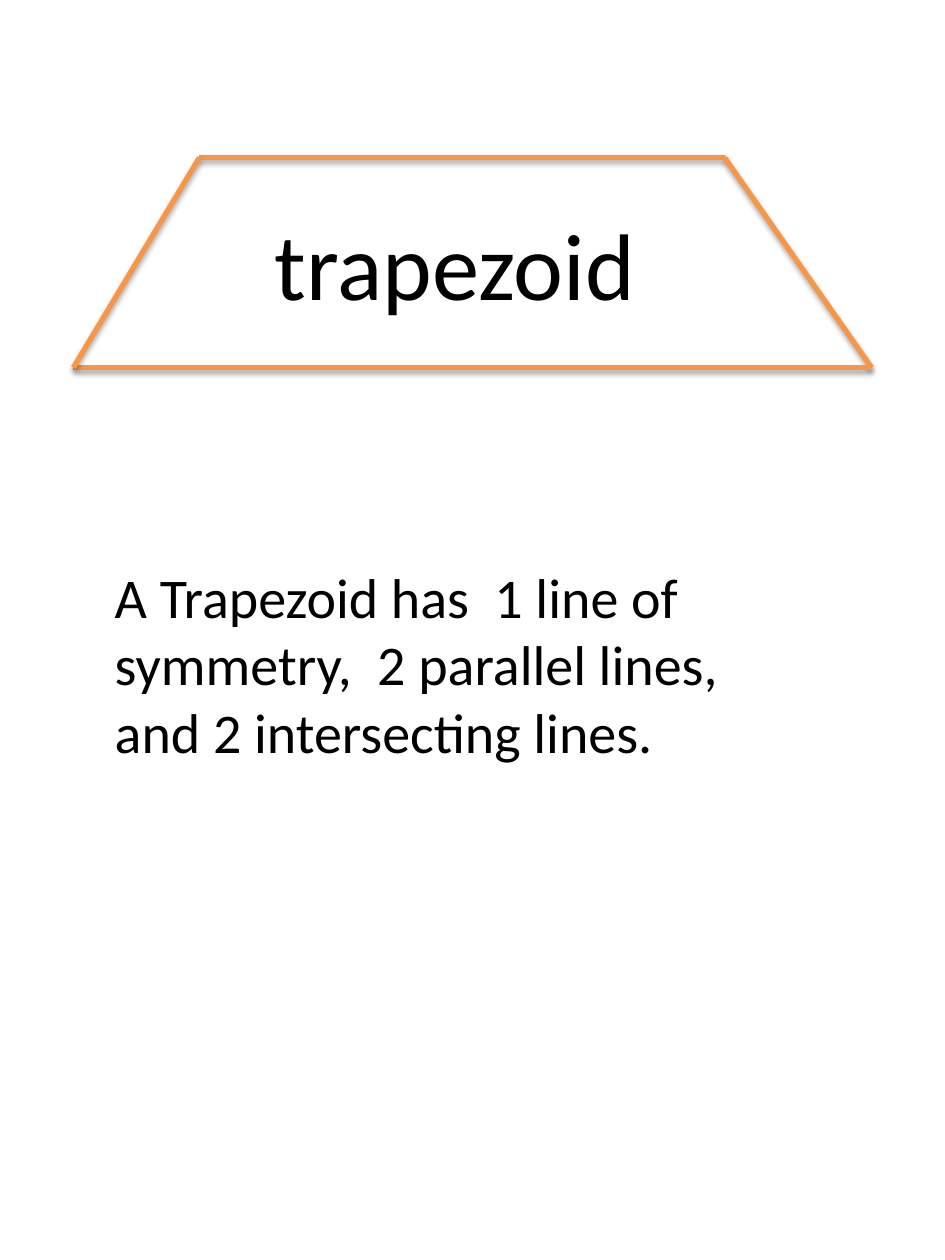
from itertools import pairwise

from lxml.etree import SubElement
from pptx import Presentation
from pptx.dml.color import RGBColor
from pptx.enum.shapes import MSO_CONNECTOR
from pptx.enum.text import MSO_AUTO_SIZE
from pptx.oxml.ns import qn
from pptx.util import Pt


def color(hex_code):
    return RGBColor.from_string(hex_code)


def write(frame, text, size=32, font="Calibri", fill="000000"):
    run = frame.paragraphs[0].add_run()
    run.text = text
    run.font.size = Pt(size)
    run.font.name = font
    run.font.color.rgb = color(fill)


def cast_shadow(connector):
    """Give the connector a soft shadow straight below it."""
    effects = SubElement(connector.element.spPr, qn("a:effectLst"))
    shadow = SubElement(effects, qn("a:outerShdw"), blurRad=str(Pt(3.1)),
                        dist=str(Pt(1.8)), dir="5400000", rotWithShape="0")
    black = SubElement(shadow, qn("a:srgbClr"), val="000000")
    SubElement(black, qn("a:alpha"), val="35000")


class GeometryCard:
    outline = "F79646"
    outline_width = 3

    def __init__(self, slide):
        self.slide = slide

    def polygon(self, corners):
        """Draw a closed outline as a group of separate sides."""
        sides = self.slide.shapes.add_group_shape().shapes
        for start, end in pairwise([*corners, corners[0]]):
            side = sides.add_connector(
                MSO_CONNECTOR.STRAIGHT, *map(Pt, (*start, *end)))
            side.line.color.rgb = color(self.outline)
            side.line.width = Pt(self.outline_width)
            cast_shadow(side)

    def text(self, text, left, top, width, height, **style):
        box = self.slide.shapes.add_textbox(*map(Pt, (left, top, width, height)))
        frame = box.text_frame
        frame.word_wrap = True
        frame.auto_size = MSO_AUTO_SIZE.SHAPE_TO_FIT_TEXT
        write(frame, text, **style)


def main():
    deck = Presentation()
    deck.slide_width, deck.slide_height = Pt(540), Pt(720)
    card = GeometryCard(deck.slides.add_slide(deck.slide_layouts[6]))

    card.polygon([(114, 90), (414, 90), (498, 210), (42, 210)])
    card.text("trapezoid", 150, 114, 288, 72.7, size=54)
    card.text("A Trapezoid has  1 line of symmetry,  2 parallel lines, "
              "and 2 intersecting lines.", 58.5, 318, 396, 123.8)

    deck.save("out.pptx")


if __name__ == "__main__":
    main()
